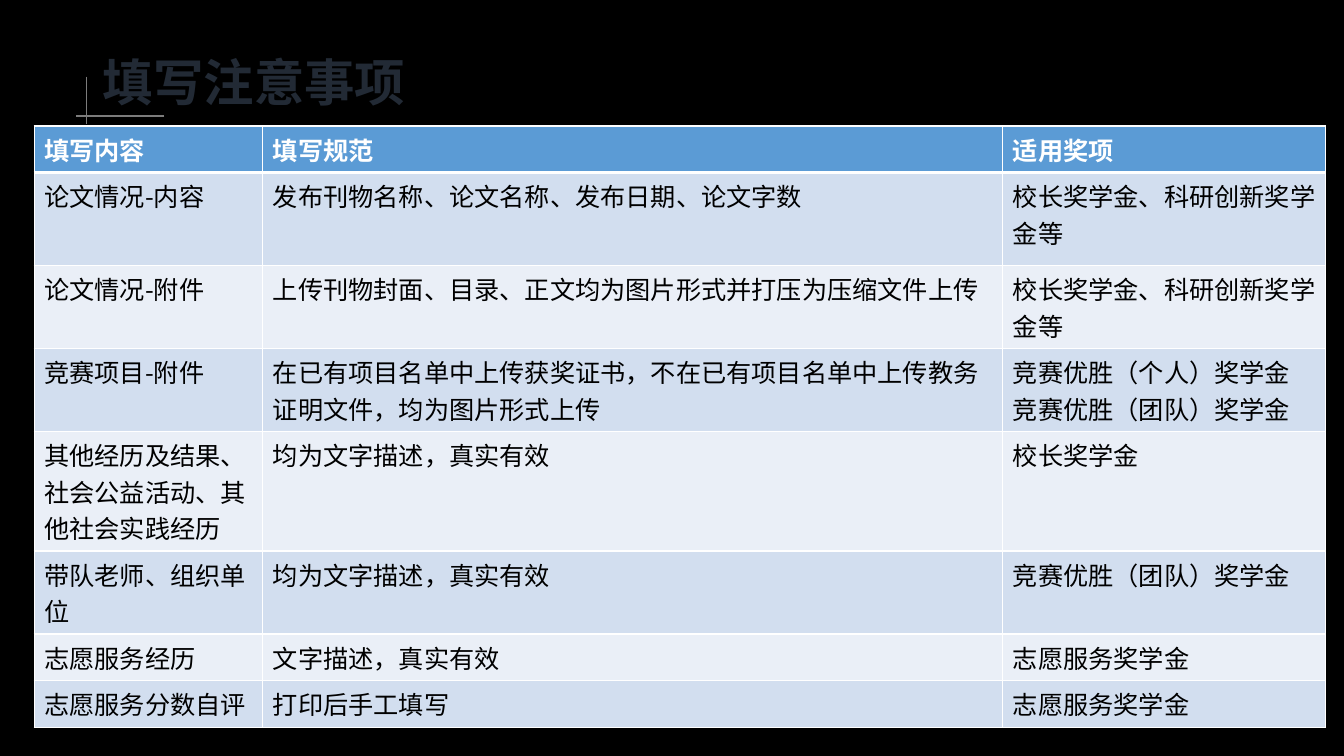
"""Build the slide of notes on filling in the scholarship form."""
from dataclasses import dataclass

from lxml.etree import SubElement
from pptx import Presentation
from pptx.dml.color import RGBColor
from pptx.enum.shapes import MSO_CONNECTOR
from pptx.enum.text import MSO_ANCHOR, MSO_AUTO_SIZE, PP_ALIGN
from pptx.oxml.ns import qn
from pptx.util import Pt

TITLE = "填写注意事项"
ROWS = [
    ("填写内容", "填写规范", "适用奖项"),
    ("论文情况-内容", "发布刊物名称、论文名称、发布日期、论文字数", "校长奖学金、科研创新奖学金等"),
    ("论文情况-附件", "上传刊物封面、目录、正文均为图片形式并打压为压缩文件上传", "校长奖学金、科研创新奖学金等"),
    ("竞赛项目-附件",
     "在已有项目名单中上传获奖证书，不在已有项目名单中上传教务证明文件，均为图片形式上传",
     "竞赛优胜（个人）奖学金\n竞赛优胜（团队）奖学金"),
    ("其他经历及结果、社会公益活动、其他社会实践经历", "均为文字描述，真实有效", "校长奖学金"),
    ("带队老师、组织单位", "均为文字描述，真实有效", "竞赛优胜（团队）奖学金"),
    ("志愿服务经历", "文字描述，真实有效", "志愿服务奖学金"),
    ("志愿服务分数自评", "打印后手工填写", "志愿服务奖学金"),
]
TITLE_BOX = (66.24, 33.84, 532.08, 54)
TITLE_RULES = [(61.92, 54.72, 61.92, 88.56), (117.36, 82.8, 54, 82.8)]
TABLE_ORIGIN = (24.48, 90)
COLUMN_WIDTHS = (163.3, 528.5, 230.5)
ROW_HEIGHT, TALL_ROW_HEIGHT, TALL_ROW = 29.2, 66.2, 1


@dataclass(frozen=True)
class Theme:
    """Colours, font and type sizes of the slide."""

    font: str = "Noto Sans CJK SC"
    background: str = "000000"
    title: str = "222A35"
    rule: str = "7C7C7C"
    header: str = "5B9BD5"
    header_text: str = "FFFFFF"
    body_text: str = "000000"
    border: str = "FFFFFF"
    bands: tuple = ("EAEFF7", "D2DEEF")
    title_size: int = 36
    table_size: int = 18


THEME = Theme()


def add_text(paragraph, text, size, colour, bold):
    """Add one formatted run to a paragraph."""
    run = paragraph.add_run()
    run.text = text
    run.font.size = Pt(size)
    run.font.bold = bold
    run.font.color.rgb = RGBColor.from_string(colour)
    run.font.name = THEME.font
    SubElement(run.font._element, qn("a:ea"), typeface=THEME.font)


def add_title(slide):
    """Place the title and the two thin rules beside it."""
    for ends in TITLE_RULES:
        rule = slide.shapes.add_connector(MSO_CONNECTOR.STRAIGHT, *map(Pt, ends))
        rule.line.color.rgb = RGBColor.from_string(THEME.rule)
        rule.line.width = Pt(1)
        SubElement(rule._element.spPr, qn("a:effectLst"))
    title = slide.shapes.title
    title.left, title.top, title.width, title.height = map(Pt, TITLE_BOX)
    frame = title.text_frame
    frame.auto_size = MSO_AUTO_SIZE.NONE
    frame.vertical_anchor = MSO_ANCHOR.MIDDLE
    paragraph = frame.paragraphs[0]
    paragraph.alignment = PP_ALIGN.LEFT
    paragraph.line_spacing = 0.9
    add_text(paragraph, TITLE, THEME.title_size, THEME.title, True)


def add_borders(cell, row_index):
    """Draw the cell borders, heavier under the header row."""
    widths = {
        "L": 1,
        "R": 1,
        "T": 3 if row_index == 1 else 1,
        "B": 3 if row_index == 0 else 1,
    }
    properties = cell._tc.get_or_add_tcPr()
    for side, width in widths.items():
        line = SubElement(properties, qn(f"a:ln{side}"), w=str(Pt(width)))
        fill = SubElement(line, qn("a:solidFill"))
        SubElement(fill, qn("a:srgbClr"), val=THEME.border)


def fill_cell(cell, text, row_index):
    """Write and colour one table cell."""
    is_header = row_index == 0
    add_borders(cell, row_index)
    cell.fill.solid()
    cell.fill.fore_color.rgb = RGBColor.from_string(
        THEME.header if is_header else THEME.bands[row_index % 2])
    frame = cell.text_frame
    for index, line in enumerate(text.split("\n")):
        paragraph = frame.add_paragraph() if index else frame.paragraphs[0]
        colour = THEME.header_text if is_header else THEME.body_text
        add_text(paragraph, line, THEME.table_size, colour, is_header)


def add_notes_table(slide):
    """Add the table of filling rules."""
    heights = [TALL_ROW_HEIGHT if index == TALL_ROW else ROW_HEIGHT
               for index in range(len(ROWS))]
    size = (sum(COLUMN_WIDTHS), sum(heights))
    table = slide.shapes.add_table(
        len(ROWS), len(COLUMN_WIDTHS), *map(Pt, TABLE_ORIGIN + size)).table
    for column, width in zip(table.columns, COLUMN_WIDTHS):
        column.width = Pt(width)
    for row_index, (row, texts) in enumerate(zip(table.rows, ROWS)):
        row.height = Pt(heights[row_index])
        for cell, text in zip(row.cells, texts):
            fill_cell(cell, text, row_index)


def main():
    """Create and save the presentation."""
    presentation = Presentation()
    presentation.slide_width, presentation.slide_height = Pt(960), Pt(540)
    slide = presentation.slides.add_slide(presentation.slide_layouts[5])
    slide.background.fill.solid()
    slide.background.fill.fore_color.rgb = RGBColor.from_string(THEME.background)
    add_title(slide)
    add_notes_table(slide)
    presentation.save("out.pptx")


if __name__ == "__main__":
    main()
